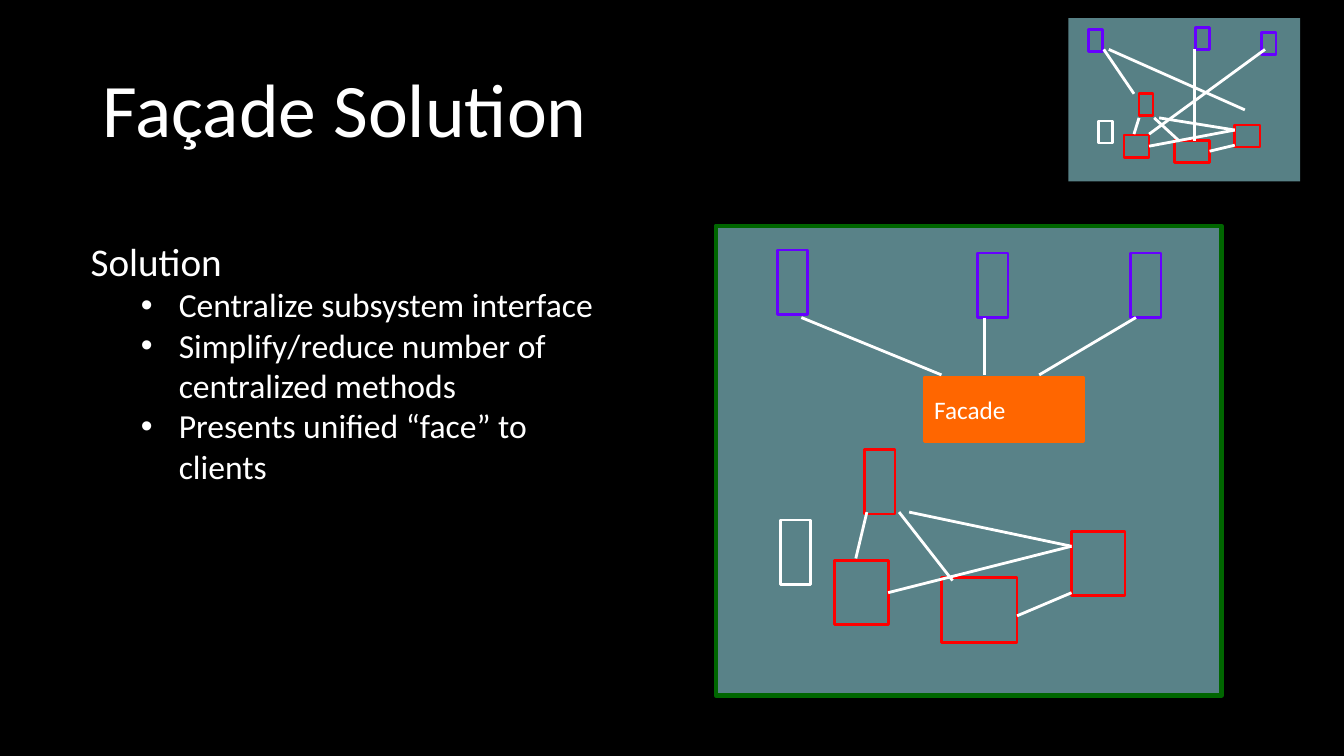
import pptx
import pptx.util
import pptx.dml.color
import pptx.enum.shapes
import pptx.enum.text
import pptx.oxml.ns
import lxml.etree

Pt = pptx.util.Pt
qn = pptx.oxml.ns.qn
ANCHOR = pptx.enum.text.MSO_ANCHOR
COLORS = {"black": "000000", "white": "FFFFFF", "teal": "8DCFD8", "green": "006600",
          "red": "FF0000", "purple": "6600FF", "orange": "FF6600"}
RGB = {k: pptx.dml.color.RGBColor.from_string(v) for k, v in COLORS.items()}

prs = pptx.Presentation()
prs.slide_width, prs.slide_height = Pt(960), Pt(540)
s = prs.slides.add_slide(prs.slide_layouts[6])
s.background.fill.solid()
s.background.fill.fore_color.rgb = RGB["black"]


def add_rect(x, y, w, h, fill=None, line=None, width=2, alpha=None):
    sp = s.shapes.add_shape(pptx.enum.shapes.MSO_SHAPE.RECTANGLE, Pt(x), Pt(y), Pt(w), Pt(h))
    sp.shadow.inherit = False
    if fill:
        sp.fill.solid()
        sp.fill.fore_color.rgb = RGB[fill]
    else:
        sp.fill.background()
    if alpha:
        clr = sp.fill._xPr.find(qn("a:solidFill"))[0]
        lxml.etree.SubElement(clr, qn("a:alpha")).set("val", str(alpha * 1000))
    if line:
        sp.line.color.rgb = RGB[line]
        sp.line.width = Pt(width)
    else:
        sp.line.fill.background()
    return sp


def write(sp, paragraphs, anchor):
    tf = sp.text_frame
    tf.word_wrap = True
    tf.vertical_anchor = anchor
    for i, (text, size, spacing, bullet) in enumerate(paragraphs):
        p = tf.paragraphs[0] if i == 0 else tf.add_paragraph()
        p.alignment = pptx.enum.text.PP_ALIGN.LEFT
        p.line_spacing = spacing
        if bullet:
            p.level = 1
            pPr = p._p.get_or_add_pPr()
            pPr.set("marL", str(Pt(63)))
            pPr.set("indent", str(Pt(-27)))
            lxml.etree.SubElement(pPr, qn("a:buFont")).set("typeface", "Arial")
            lxml.etree.SubElement(pPr, qn("a:buChar")).set("char", "•")
        r = p.add_run()
        r.text = text
        for name, value in {"size": Pt(size), "name": "Calibri"}.items():
            setattr(r.font, name, value)
        r.font.color.rgb = RGB["white"]


# Panels
add_rect(511.2, 161.3, 361.4, 335.5, "teal", "green", 3, alpha=63)
add_rect(763.2, 13, 165.6, 116.6, "teal", alpha=62)

# Title and body
title = s.shapes.add_textbox(Pt(66.2), Pt(28.8), Pt(828), Pt(104.4))
write(title, [("Façade Solution", 54, 0.9, False)], ANCHOR.MIDDLE)
body = s.shapes.add_textbox(Pt(57.6), Pt(166), Pt(390.2), Pt(302))
points = ["Centralize subsystem interface", "Simplify/reduce number of centralized methods",
          "Presents unified “face” to clients"]
write(body, [("Solution", 28, 1.0, False)] + [(t, 24, 1.0, True) for t in points], ANCHOR.TOP)

# Facade block
facade = add_rect(660.2, 269.3, 113.8, 46.1, "orange", "orange")
write(facade, [("Facade", 18, 1.0, False)], ANCHOR.MIDDLE)

# Diagrams: box height, boxes (colour, x, y, width), lines (x1, y1, x2, y2)
before = (15.8, [
    ("white", 784.8, 86.4, 10.1), ("red", 813.6, 67, 10.1), ("red", 882, 89.3, 18),
    ("red", 802.8, 96.5, 18), ("red", 838.8, 100.1, 25.2),
    ("purple", 777.6, 20.9, 10.1), ("purple", 853.9, 19.4, 10.1), ("purple", 901.4, 23, 10.1),
], [
    (813.6, 84.2, 810, 95.8), (828, 84.2, 882, 92.9), (882, 103.7, 864, 109.4),
    (824.4, 84.2, 842.4, 100.8), (882, 92.9, 820.8, 103.7), (792, 35.3, 889.2, 78.5),
    (853.2, 35.3, 853.2, 100.8), (903.6, 35.3, 820.8, 95.8), (788.4, 35.3, 810, 67),
])
after = (46.1, [
    ("white", 557.3, 371.5, 21.6), ("red", 617.8, 321.1, 21.6), ("red", 765.4, 379.4, 38.2),
    ("red", 596.2, 400.3, 38.2), ("red", 672.5, 412.6, 54),
    ("purple", 555.1, 178.6, 21.6), ("purple", 698.4, 180.7, 21.6), ("purple", 807.8, 180.7, 21.6),
], [
    (619.2, 365.8, 611.3, 398.9), (649.4, 365.8, 765.4, 390.2), (765.4, 423.4, 726.5, 439.9),
    (642.2, 365.8, 680.4, 414.7), (765.4, 390.2, 634.3, 423.4), (572.4, 226.8, 672.5, 267.8),
    (703.4, 226.8, 703.4, 267.8), (811.4, 226.8, 742.3, 267.8),
])
for height, boxes, lines in (before, after):
    sides = []
    for color, x, y, w in boxes:
        sp = add_rect(x, y, w, height, line=color)
        middles = [(x + w / 2, y), (x, y + height / 2), (x + w / 2, y + height), (x + w, y + height / 2)]
        sides += [(sp, site, mx, my) for site, (mx, my) in enumerate(middles)]
    for x1, y1, x2, y2 in lines:
        cn = s.shapes.add_connector(pptx.enum.shapes.MSO_CONNECTOR.STRAIGHT, Pt(x1), Pt(y1), Pt(x2), Pt(y2))
        cn.line.color.rgb = RGB["white"]
        cn.line.width = Pt(2)
        lxml.etree.SubElement(cn._element.spPr, qn("a:effectLst"))
        # Join ends that meet the middle of a box side
        for join, x, y in ((cn.begin_connect, x1, y1), (cn.end_connect, x2, y2)):
            for sp, site, mx, my in sides:
                if abs(mx - x) < 1.5 and abs(my - y) < 1.5:
                    join(sp, site)

prs.save("out.pptx")
